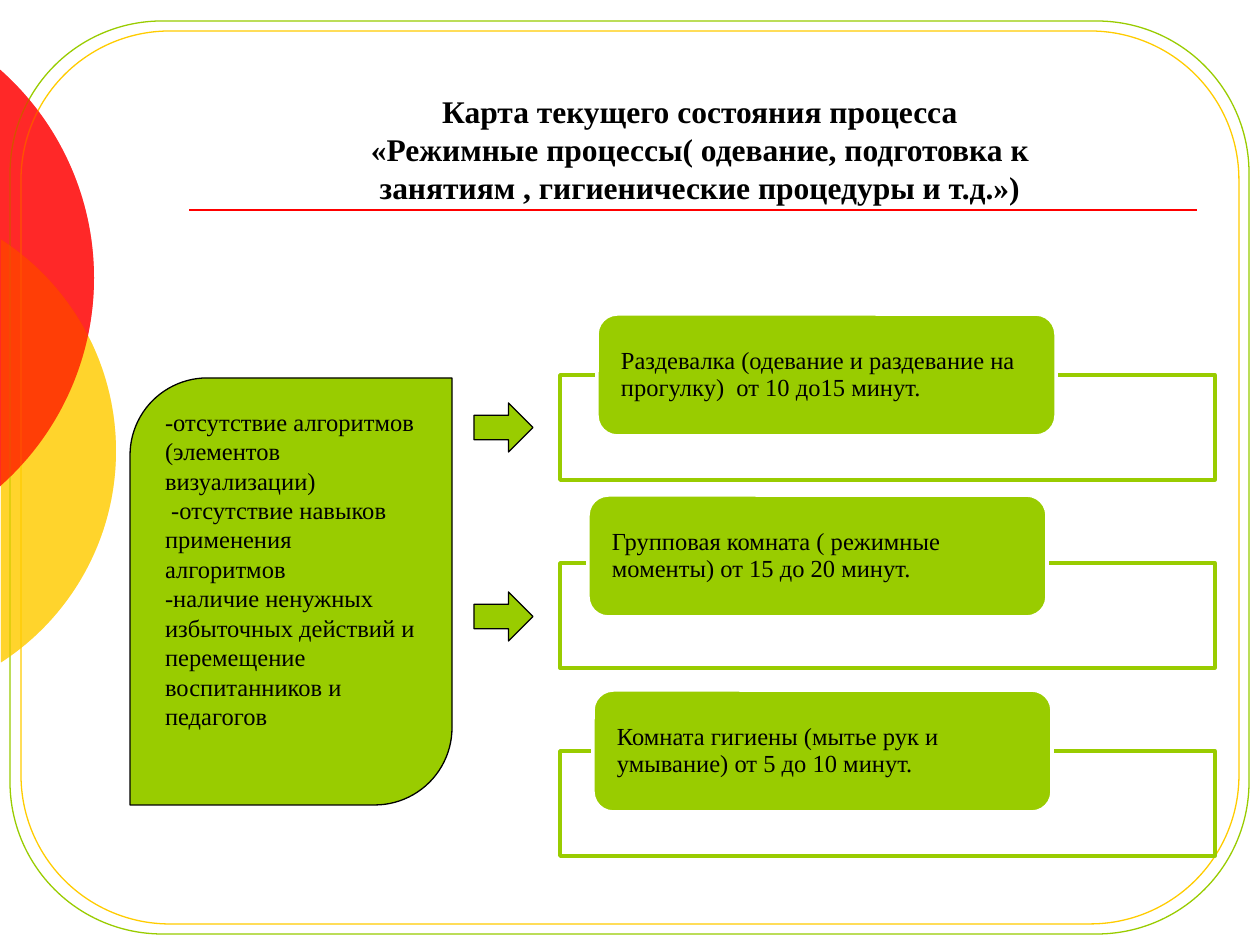
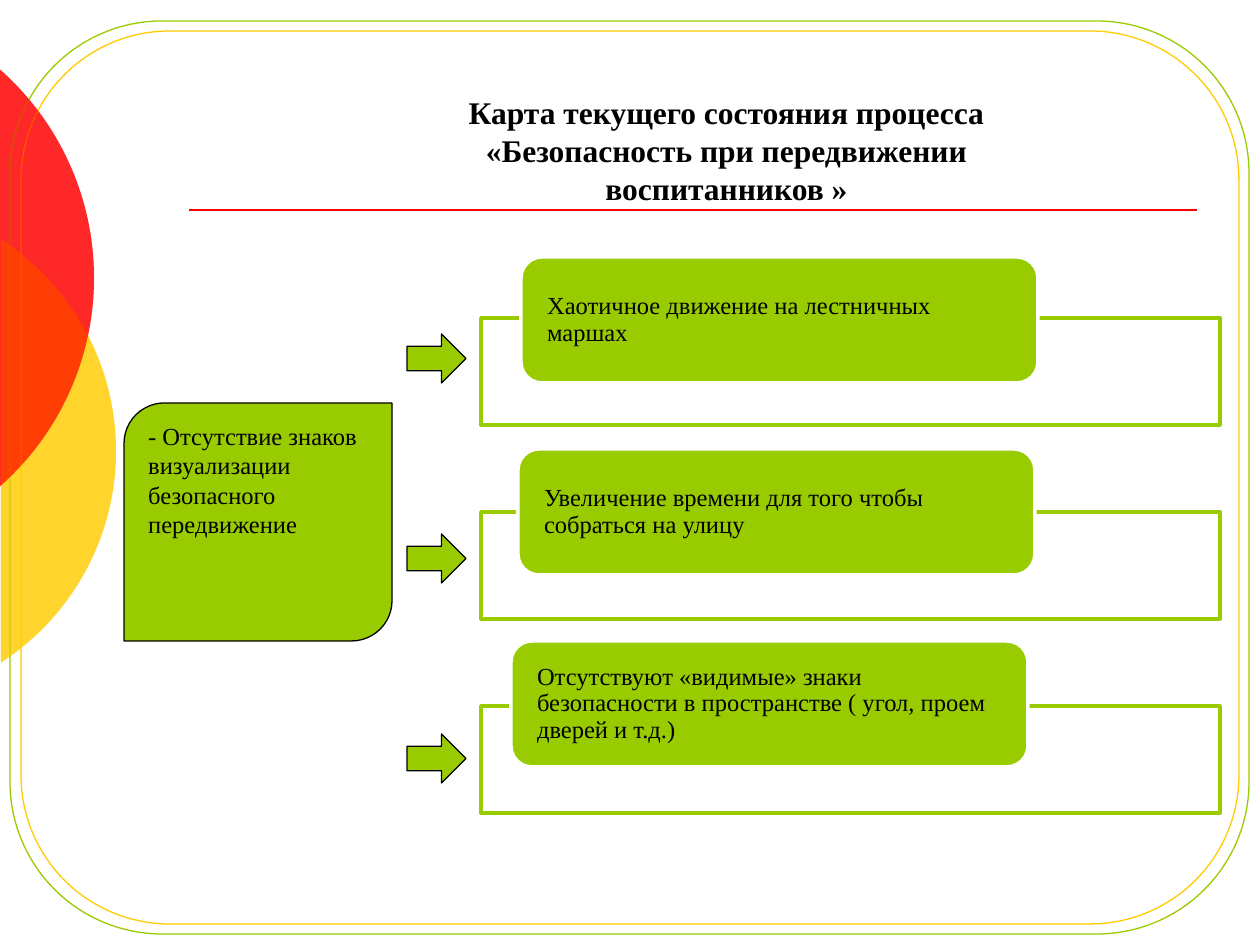
from dataclasses import dataclass
from math import acos, cos, sin, tan

from lxml.etree import SubElement
from pptx import Presentation
from pptx.dml.color import RGBColor
from pptx.enum.shapes import MSO_CONNECTOR, MSO_SHAPE
from pptx.enum.text import MSO_ANCHOR, MSO_AUTO_SIZE, PP_ALIGN
from pptx.oxml.ns import qn
from pptx.util import Emu, Pt

SCALE = 914400 / 126


@dataclass(frozen=True)
class Theme:
    font: str = "Times New Roman"
    ink: str = "000000"
    paper: str = "FFFFFF"
    green: str = "99CC00"
    yellow: str = "FFCC00"
    red: str = "FF0000"
    title_size: int = 18
    text_size: int = 14
    thin: float = 0.75
    rule: float = 1
    thick: float = 2


def px(*lengths):
    return [Emu(round(n * SCALE)) for n in lengths]


def write(tf, text, *, font, size, color, bold=False, align=PP_ALIGN.LEFT,
          anchor=MSO_ANCHOR.TOP, spacing=None, inset=None):
    tf.word_wrap = True
    tf.auto_size = MSO_AUTO_SIZE.NONE
    tf.vertical_anchor = anchor
    if inset is not None:
        tf.margin_left, tf.margin_right, tf.margin_top, tf.margin_bottom = px(inset, inset, 0, 0)
    for i, line in enumerate(text.split("\n")):
        p = tf.add_paragraph() if i else tf.paragraphs[0]
        p.alignment = align
        if spacing:
            p.line_spacing = spacing
        r = p.add_run()
        r.text = line
        r.font.name, r.font.size, r.font.bold = font, Pt(size), bold
        r.font.color.rgb = RGBColor.from_string(color)


class Deck:
    """Holds the theme and the current slide, and draws each kind of element."""

    def __init__(self, theme):
        self.theme = theme
        self.prs = Presentation()
        self.prs.slide_width, self.prs.slide_height = px(1260, 945)

    def slide(self, title, box):
        t = self.theme
        self.s = self.prs.slides.add_slide(self.prs.slide_layouts[5])
        self.backdrop()
        sp = self.s.shapes.title
        sp.left, sp.top, sp.width, sp.height = px(*box)
        write(sp.text_frame, title, font=t.font, size=t.title_size, color=t.ink,
              bold=True, align=PP_ALIGN.CENTER)

    def backdrop(self):
        t = self.theme
        circles = [(-136, 451, 252, 1, t.yellow, 58), (-184, 278, 278, -1, t.red, 60)]
        for circle in circles:
            self.disc(*circle)
        self.shape(MSO_SHAPE.ROUNDED_RECTANGLE, (10, 21, 1239, 913), line=t.green)
        self.shape(MSO_SHAPE.ROUNDED_RECTANGLE, (21, 31, 1218, 893), line=t.yellow)
        self.line((189, 210, 1197, 210), t.red, t.rule)
        for circle in circles:
            self.disc(*circle)

    def paint(self, sp, fill=None, line=None, width=None, opacity=100):
        sp.shadow.inherit = False
        if fill:
            sp.fill.solid()
            sp.fill.fore_color.rgb = RGBColor.from_string(fill)
            if opacity < 100:
                clr = sp._element.spPr.find(qn("a:solidFill"))[0]
                SubElement(clr, qn("a:alpha"), val=str(opacity * 1000))
        else:
            sp.fill.background()
        if line:
            sp.line.color.rgb = RGBColor.from_string(line)
            sp.line.width = Pt(width or self.theme.thin)
        else:
            sp.line.fill.background()

    def shape(self, kind, box, adj=(), **style):
        sp = self.s.shapes.add_shape(kind, *px(*box))
        for i, value in enumerate(adj):
            sp.adjustments[i] = value
        self.paint(sp, **style)
        return sp

    def disc(self, cx, cy, radius, edge, color, opacity):
        """Draw the part of a circle that lies right of a vertical edge, as two curves."""
        size = 2 * radius
        fb = self.s.shapes.build_freeform(cx - radius, cy - radius, scale=SCALE)
        fb.add_line_segments([(cx + radius, cy - radius), (cx + radius, cy + radius)])
        sp = fb.convert_to_shape()
        outline = sp._element.spPr.find(".//" + qn("a:path"))
        for step in list(outline):
            outline.remove(step)
        outline.set("w", str(size * 100))
        outline.set("h", str(size * 100))

        half = acos((edge - cx) / radius)
        pull = 4 / 3 * tan(half / 4)

        def at(angle, along=0):
            return (radius * (1 + cos(angle) - along * sin(angle)),
                    radius * (1 + sin(angle) + along * cos(angle)))

        steps = [("moveTo", [at(-half)])]
        for a, b in ((-half, 0), (0, half)):
            steps.append(("cubicBezTo", [at(a, pull), at(b, -pull), at(b)]))
        for name, points in steps + [("close", [])]:
            step = SubElement(outline, qn("a:" + name))
            for x, y in points:
                SubElement(step, qn("a:pt"), x=str(round(x * 100)), y=str(round(y * 100)))
        self.paint(sp, fill=color, opacity=opacity)

    def line(self, ends, color, width):
        c = self.s.shapes.add_connector(MSO_CONNECTOR.STRAIGHT, *px(*ends))
        c.line.color.rgb = RGBColor.from_string(color)
        c.line.width = Pt(width)
        SubElement(c._element.spPr, qn("a:effectLst"))

    def causes(self, text, box, corner):
        t = self.theme
        sp = self.shape(MSO_SHAPE.ROUND_2_DIAG_RECTANGLE, box, (corner, 0),
                        fill=t.green, line=t.ink)
        write(sp.text_frame, text, font=t.font, size=t.text_size, color=t.ink)

    def cards(self, items, frame, step, size, inset):
        t = self.theme
        x, y, w, h = frame
        for i, (left, top, text) in enumerate(items):
            self.shape(MSO_SHAPE.RECTANGLE, (x, y + i * step, w, h),
                       fill=t.paper, opacity=90, line=t.green, width=t.thick)
            sp = self.shape(MSO_SHAPE.ROUNDED_RECTANGLE, (left, top, *size),
                            fill=t.green, line=t.paper, width=t.thick)
            write(sp.text_frame, text, font=t.font, size=t.text_size, color=t.ink,
                  anchor=MSO_ANCHOR.MIDDLE, spacing=0.9, inset=inset)

    def arrows(self, x, y, step, count):
        t = self.theme
        for i in range(count):
            self.shape(MSO_SHAPE.RIGHT_ARROW, (x, y + i * step, 59, 49),
                       fill=t.green, line=t.ink)


def main():
    deck = Deck(Theme())

    deck.slide("Карта текущего состояния процесса «Режимные процессы( одевание, "
               "подготовка к занятиям , гигиенические процедуры и т.д.»)",
               (353, 86, 694, 127))
    deck.causes("-отсутствие алгоритмов (элементов визуализации)\n"
                " -отсутствие навыков применения алгоритмов\n"
                "-наличие ненужных избыточных действий и перемещение "
                "воспитанников и педагогов", (130, 378, 322, 427), 0.24)
    deck.cards([
        (597, 314, "Раздевалка (одевание и раздевание на прогулку)  от 10 до15 минут."),
        (588, 495, "Групповая комната ( режимные моменты) от 15 до 20 минут."),
        (593, 690, "Комната гигиены (мытье рук и умывание) от 5 до 10 минут."),
    ], frame=(560, 375, 655, 105), step=188, size=(459, 122), inset=18)
    deck.arrows(474, 403, step=189, count=2)

    deck.slide("Карта текущего состояния процесса «Безопасность при передвижении "
               "воспитанников »", (372, 87, 709, 127))
    deck.causes("- Отсутствие знаков визуализации безопасного передвижение",
                (124, 403, 268, 238), 0.17)
    deck.cards([
        (521, 257, "Хаотичное движение на лестничных маршах"),
        (518, 449, "Увеличение времени для того чтобы собраться на улицу"),
        (511, 641, "Отсутствуют «видимые» знаки безопасности в пространстве "
                   "( угол, проем дверей и т.д.)"),
    ], frame=(481, 318, 739, 107), step=194, size=(517, 126), inset=20)
    deck.arrows(407, 334, step=200, count=3)

    deck.prs.save("out.pptx")


if __name__ == "__main__":
    main()
